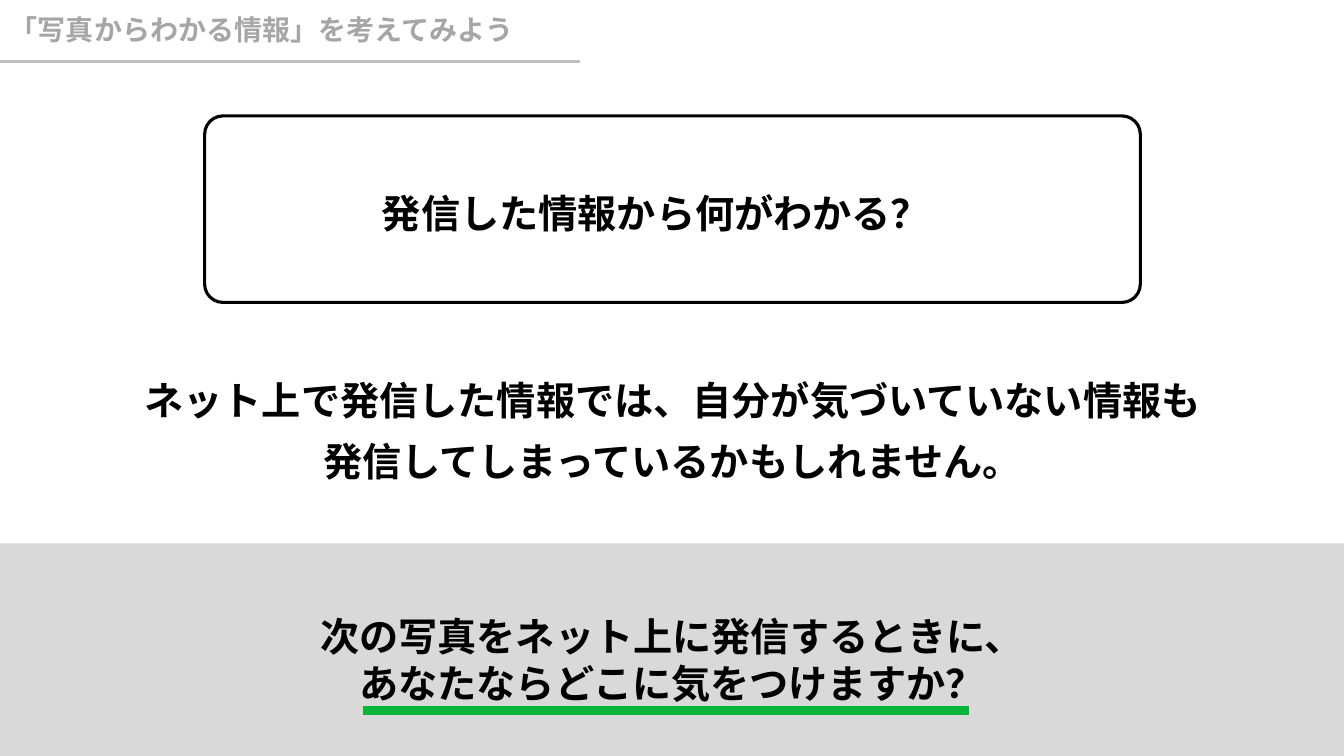
import dataclasses

import lxml.etree
import pptx
import pptx.dml.color
import pptx.enum.shapes
import pptx.enum.text
import pptx.oxml.ns
import pptx.util

Inches = pptx.util.Inches
Pt = pptx.util.Pt
Align = pptx.enum.text.PP_ALIGN
Anchor = pptx.enum.text.MSO_ANCHOR
Preset = pptx.enum.shapes.MSO_SHAPE


@dataclasses.dataclass(frozen=True)
class Theme:
    white: str = "FFFFFF"
    black: str = "000000"
    heading: str = "A6A6A6"
    rule: str = "BFBFBF"
    band: str = "D9D9D9"
    accent: str = "07B53B"
    latin_font: str = "Arial"
    japanese_font: str = "Noto Sans CJK JP"
    heading_size: int = 20
    body_size: int = 28


THEME = Theme()


@dataclasses.dataclass(frozen=True)
class Frame:
    left: float
    top: float
    width: float
    height: float

    def lengths(self) -> tuple:
        return tuple(Inches(value) for value in dataclasses.astuple(self))


@dataclasses.dataclass(frozen=True)
class Rule:
    left: float
    right: float
    top: float
    color: str
    weight: float


@dataclasses.dataclass(frozen=True)
class Panel:
    preset: int
    frame: Frame
    fill: str
    outline: str = ""
    weight: float = 0
    rounding: float = 0


@dataclasses.dataclass(frozen=True)
class Message:
    """Each paragraph is a tuple of lines."""
    frame: Frame
    paragraphs: tuple
    size: int = THEME.body_size
    color: str = THEME.black
    font: str = THEME.japanese_font
    align: int = Align.CENTER
    anchor: int = Anchor.MIDDLE
    line_spacing: float = 1.0
    space_before: float = 0
    inset_top: float = 0.05
    inset_bottom: float = 0.05


def rgb(value: str) -> pptx.dml.color.RGBColor:
    return pptx.dml.color.RGBColor.from_string(value)


def draw_rule(page, rule: Rule) -> None:
    line = page.shapes.add_connector(
        pptx.enum.shapes.MSO_CONNECTOR.STRAIGHT,
        Inches(rule.left), Inches(rule.top), Inches(rule.right), Inches(rule.top))
    line.line.color.rgb = rgb(rule.color)
    line.line.width = Pt(rule.weight)
    lxml.etree.SubElement(line._element.spPr, pptx.oxml.ns.qn("a:effectLst"))


def draw_panel(page, panel: Panel) -> None:
    shape = page.shapes.add_shape(panel.preset, *panel.frame.lengths())
    shape.shadow.inherit = False
    shape.fill.solid()
    shape.fill.fore_color.rgb = rgb(panel.fill)
    if panel.rounding:
        shape.adjustments[0] = panel.rounding
    if panel.outline:
        shape.line.color.rgb = rgb(panel.outline)
        shape.line.width = Pt(panel.weight)
    else:
        shape.line.fill.background()


def add_span(para, text: str, message: Message) -> None:
    span = para.add_run()
    span.text = text
    span.font.name = message.font
    span.font.size = Pt(message.size)
    span.font.bold = True
    span.font.color.rgb = rgb(message.color)
    # Japanese glyphs use the East Asian font slot
    latin = span._r.rPr.find(pptx.oxml.ns.qn("a:latin"))
    east_asian = lxml.etree.Element(pptx.oxml.ns.qn("a:ea"))
    east_asian.set("typeface", THEME.japanese_font)
    latin.addnext(east_asian)


def draw_message(page, message: Message) -> None:
    box = page.shapes.add_textbox(*message.frame.lengths())
    frame = box.text_frame
    frame.word_wrap = True
    frame.vertical_anchor = message.anchor
    frame.margin_top = Inches(message.inset_top)
    frame.margin_bottom = Inches(message.inset_bottom)
    for index, lines in enumerate(message.paragraphs):
        para = frame.add_paragraph() if index else frame.paragraphs[0]
        para.alignment = message.align
        para.line_spacing = message.line_spacing
        para.space_before = Pt(message.space_before)
        for number, text in enumerate(lines):
            if number:
                para.add_line_break()
            add_span(para, text, message)


BAND = Frame(0, 5.39, 13.33, 2.11)

ELEMENTS = (
    # Heading with its rule
    Rule(0, 5.75, 0.61, THEME.rule, 1.5),
    Message(Frame(0, 0.02, 11.5, 0.59), (("「写真からわかる情報」を考えてみよう",),),
            size=THEME.heading_size, color=THEME.heading, font=THEME.latin_font,
            align=Align.LEFT, line_spacing=0.9),
    # Framed question
    Panel(Preset.ROUNDED_RECTANGLE, Frame(2.03, 1.15, 9.28, 1.85), THEME.white,
          THEME.black, 2.25, 0.098),
    Message(Frame(3.69, 1.36, 7.21, 1.44), (("発信した情報から何がわかる？",),),
            align=Align.LEFT, line_spacing=1.3, space_before=10, inset_bottom=0.12),
    # Explanation
    Message(Frame(0.92, 3.54, 11.5, 3.51),
            (("ネット上で発信した情報では、自分が気づいていない情報も",
              "発信してしまっているかもしれません。"),),
            font=THEME.latin_font, anchor=Anchor.TOP, line_spacing=1.3, space_before=10),
    # Closing band with the underlined prompt
    Panel(Preset.RECTANGLE, BAND, THEME.band),
    Message(BAND, (("次の写真をネット上に発信するときに、",),
                   ("あなたならどこに気をつけますか？",)), inset_top=0.24),
    Rule(3.6, 9.61, 7.05, THEME.accent, 6),
)

DRAWERS = {Rule: draw_rule, Panel: draw_panel, Message: draw_message}


def main() -> None:
    deck = pptx.Presentation()
    deck.slide_width = Inches(13.33)
    deck.slide_height = Inches(7.5)
    page = deck.slides.add_slide(deck.slide_layouts[6])
    for element in ELEMENTS:
        DRAWERS[type(element)](page, element)
    deck.save("out.pptx")


if __name__ == "__main__":
    main()
